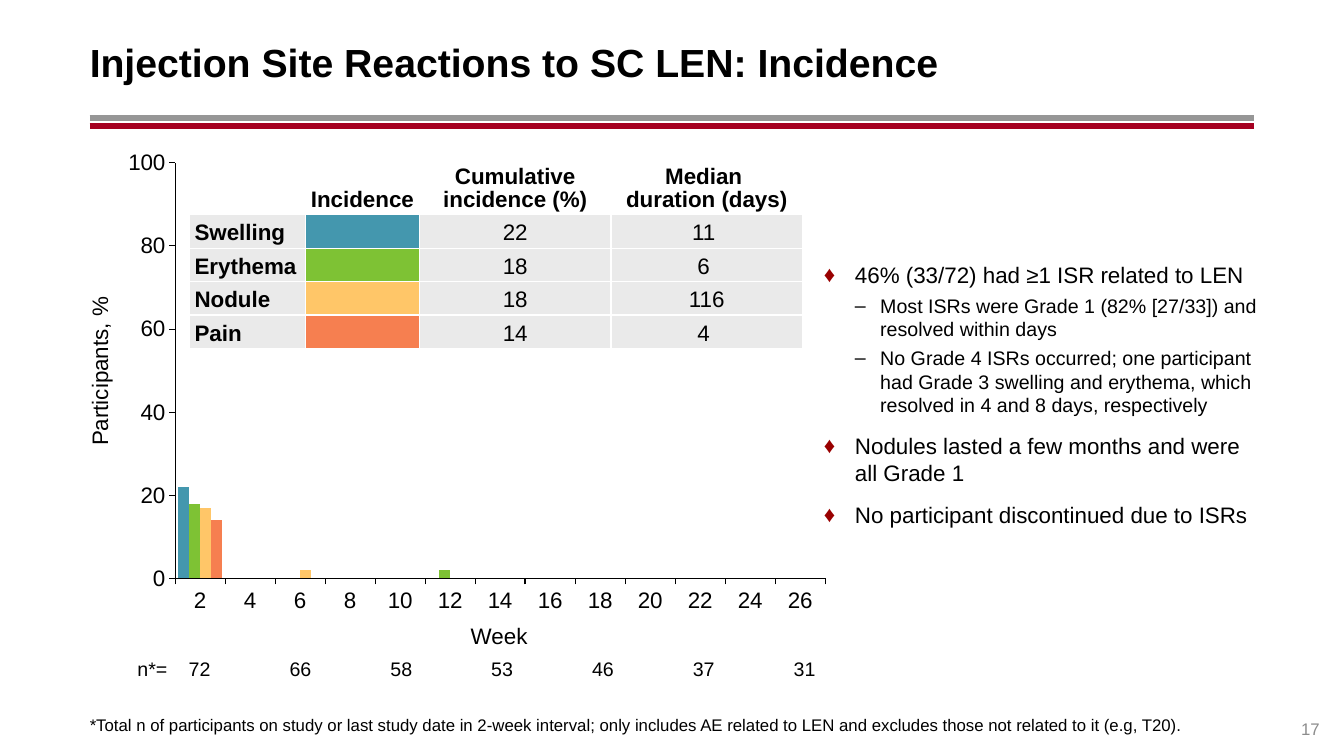
"""Build the slide on the incidence of injection site reactions."""
import pptx
import pptx.chart.data
import pptx.dml.color
import pptx.enum.chart
import pptx.enum.shapes
import pptx.enum.text
import pptx.oxml
import pptx.oxml.ns
import pptx.util

WIDTH, HEIGHT = 13.33, 7.5
LEFT, RIGHT = 0.89, 12.44
FONT, BLACK, PALE = "Arial", "000000", "EAEAEA"
ALIGN = pptx.enum.text.PP_ALIGN
ANCHOR = pptx.enum.text.MSO_ANCHOR
INSETS = (0.1, 0.05, 0.1, 0.05)

TITLE = "Injection Site Reactions to SC LEN: Incidence"
RULES = [(1.17, "969696"), (1.25, "A50021")]
WEEKS = range(2, 27, 2)
HEADINGS = ["", "Incidence", "Cumulative incidence (%)", "Median \nduration (days)"]
REACTIONS = [
    ("Swelling", "4497AE", "22", "11 ", {2: 22}),
    ("Erythema", "7EC234", "18", "6 ", {2: 18, 12: 2}),
    ("Nodule", "FFC668", "18", "116", {2: 17, 6: 2}),
    ("Pain", "F67F50", "14", "4 ", {2: 14}),
]
COUNTS = {2: "72", 6: "66", 10: "58", 14: "53", 18: "46", 22: "37", 26: "31"}
FINDINGS = [
    (0, "46% (33/72) had ≥1 ISR related to LEN"),
    (1, "Most ISRs were Grade 1 (82% [27/33]) and resolved within days"),
    (1, "No Grade 4 ISRs occurred; one participant had Grade 3 swelling and erythema, "
        "which resolved in 4 and 8 days, respectively"),
    (0, "Nodules lasted a few months and were all Grade 1"),
    (0, "No participant discontinued due to ISRs"),
]
LEVELS = [
    dict(size=16, indent=0.31, hang=0.31, before=9, mark="♦", color="990000"),
    dict(size=14, indent=0.56, hang=0.25, before=2, mark="–", color=BLACK),
]
FOOTNOTE = ("*Total n of participants on study or last study date in 2-week interval; "
            "only includes AE related to LEN and excludes those not related to it (e.g, T20).")


def inches(*lengths):
    """Convert lengths in inches."""
    return [pptx.util.Inches(length) for length in lengths]


def rgb(color):
    """Turn a hex string into a colour."""
    return pptx.dml.color.RGBColor.from_string(color)


def xml(tag, attributes="", inner=""):
    """Make an element of the drawing or chart namespace."""
    spaces = pptx.oxml.ns.nsdecls(tag.split(":")[0])
    return pptx.oxml.parse_xml(f"<{tag} {spaces} {attributes}>{inner}</{tag}>")


def style(font, size, color=BLACK, bold=False):
    """Set the face, size, colour and weight of a font."""
    font.name, font.size, font.bold = FONT, pptx.util.Pt(size), bold
    font.color.rgb = rgb(color)


def write(paragraph, text, size, color=BLACK, bold=False, align=ALIGN.LEFT):
    """Add one formatted run to a paragraph."""
    run = paragraph.add_run()
    run.text = text
    style(run.font, size, color, bold)
    paragraph.alignment = align


def set_frame(frame, insets, anchor):
    """Set the wrapping, insets and anchor of a text frame."""
    frame.word_wrap = True
    frame.vertical_anchor = anchor
    frame.margin_left, frame.margin_top, frame.margin_right, frame.margin_bottom = inches(*insets)


def add_text(slide, box, text, size, color=BLACK, align=ALIGN.LEFT, insets=(0, 0, 0, 0)):
    """Add a bottom-anchored text box with one run."""
    shape = slide.shapes.add_textbox(*inches(*box))
    set_frame(shape.text_frame, insets, ANCHOR.BOTTOM)
    write(shape.text_frame.paragraphs[0], text, size, color, align=align)
    return shape


def add_table(slide, left, top, columns, rows):
    """Add a plain table with the given column widths and row heights."""
    box = inches(left, top, sum(columns), sum(rows))
    table = slide.shapes.add_table(len(rows), len(columns), *box).table
    table.first_row = table.horz_banding = False
    for column, width in zip(table.columns, inches(*columns)):
        column.width = width
    for row, height in zip(table.rows, inches(*rows)):
        row.height = height
    return table


def fill_cell(cell, text, size, insets, anchor, align, fill=None, bold=False, spacing=1.0):
    """Write a cell, with white borders and an optional fill."""
    cell.vertical_anchor = anchor
    cell.margin_left, cell.margin_top, cell.margin_right, cell.margin_bottom = inches(*insets)
    frame = cell.text_frame
    for index, line in enumerate(text.split("\n")):
        paragraph = frame.add_paragraph() if index else frame.paragraphs[0]
        paragraph.line_spacing = spacing
        if line:
            write(paragraph, line, size, bold=bold, align=align)
        else:
            paragraph._p.append(xml("a:endParaRPr", f'sz="{size * 100}"'))
    white = '<a:solidFill><a:srgbClr val="FFFFFF"/></a:solidFill>'
    for side in "LRTB":
        cell._tc.get_or_add_tcPr().append(xml(f"a:ln{side}", 'w="12700"', white))
    if fill:
        cell.fill.solid()
        cell.fill.fore_color.rgb = rgb(fill)
    else:
        cell.fill.background()


def add_incidence_chart(slide):
    """Add the clustered columns by week."""
    data = pptx.chart.data.CategoryChartData()
    data.categories = [str(week) for week in WEEKS]
    for index, reaction in enumerate(REACTIONS, 1):
        data.add_series(f"Series {index}", [reaction[4].get(week) for week in WEEKS])
    kind = pptx.enum.chart.XL_CHART_TYPE.COLUMN_CLUSTERED
    chart = slide.shapes.add_chart(kind, *inches(1.14, 1.48, 7.18, 4.67), data).chart
    chart.has_legend = chart.has_title = False
    style(chart.font, 10)
    plot = chart.plots[0]
    plot.gap_width, plot.overlap, plot.vary_by_categories = 50, 0, False
    for series, reaction in zip(plot.series, REACTIONS):
        series.format.fill.solid()
        series.format.fill.fore_color.rgb = rgb(reaction[1])
    for axis in (chart.category_axis, chart.value_axis):
        axis.has_major_gridlines = False
        axis.major_tick_mark = pptx.enum.chart.XL_TICK_MARK.OUTSIDE
        axis.minor_tick_mark = pptx.enum.chart.XL_TICK_MARK.NONE
        style(axis.tick_labels.font, 16)
        axis.format.line.color.rgb = rgb(BLACK)
        axis.format.line.width = pptx.util.Pt(0.75)
    scale = chart.value_axis
    scale.minimum_scale, scale.maximum_scale, scale.major_unit = 0, 100, 20
    area = chart._chartSpace.chart.plotArea
    for old in area.findall(pptx.oxml.ns.qn("c:layout")):
        area.remove(old)
    settings = dict(layoutTarget="inner", xMode="edge", yMode="edge",
                    x=0.083, y=0.029, w=0.898, h=0.883)
    inner = "".join(f'<c:{key} val="{value}"/>' for key, value in settings.items())
    area.insert(0, xml("c:layout", "", f"<c:manualLayout>{inner}</c:manualLayout>"))


def add_reaction_table(slide):
    """Add the table that also serves as the chart's key."""
    table = add_table(slide, 1.88, 1.59, [1.15, 1.13, 1.9, 1.9], [0.54] + [0.31] * 4)
    rows = [HEADINGS] + [[name, "", share, days] for name, _, share, days, _ in REACTIONS]
    for r, row in enumerate(rows):
        for c, text in enumerate(row):
            fill = None if r == 0 else REACTIONS[r - 1][1] if c == 1 else PALE
            fill_cell(table.cell(r, c), text, 16, (0.05, 0.03, 0.05, 0.03), ANCHOR.BOTTOM,
                      ALIGN.CENTER if c else ALIGN.LEFT, fill, r == 0 or c == 0, 0.9)


def add_count_table(slide):
    """Add the participant counts under the weeks."""
    table = add_table(slide, 1, 6.53, [0.73] + [0.5] * len(WEEKS), [0.23])
    fill_cell(table.cell(0, 0), "n*=", 14, (0, 0, 0.07, 0), ANCHOR.MIDDLE, ALIGN.RIGHT)
    for column, week in enumerate(WEEKS, 1):
        fill_cell(table.cell(0, column), COUNTS.get(week, ""), 14, (0, 0, 0, 0),
                  ANCHOR.MIDDLE, ALIGN.CENTER)


def add_findings(slide):
    """Add the bulleted findings."""
    frame = slide.shapes.add_textbox(*inches(8.17, 2.54, 4.41, 3.33)).text_frame
    set_frame(frame, (0, 0.05, 0.1, 0.05), ANCHOR.TOP)
    for index, (level, text) in enumerate(FINDINGS):
        look = LEVELS[level]
        paragraph = frame.add_paragraph() if index else frame.paragraphs[0]
        write(paragraph, text, look["size"])
        paragraph.level = level
        paragraph.space_before = pptx.util.Pt(look["before"])
        paragraph.space_after = pptx.util.Pt(2)
        properties = paragraph._p.get_or_add_pPr()
        indent, hang = inches(look["indent"], look["hang"])
        properties.set("marL", str(indent))
        properties.set("indent", str(-hang))
        properties.append(xml("a:buClr", "", f'<a:srgbClr val="{look["color"]}"/>'))
        properties.append(xml("a:buFont", f'typeface="{FONT}"'))
        properties.append(xml("a:buChar", f'char="{look["mark"]}"'))


def main():
    """Build and save the slide."""
    deck = pptx.Presentation()
    deck.slide_width, deck.slide_height = inches(WIDTH, HEIGHT)
    slide = deck.slides.add_slide(deck.slide_layouts[5])
    for y, color in RULES:
        rule = slide.shapes.add_connector(pptx.enum.shapes.MSO_CONNECTOR.STRAIGHT,
                                          *inches(LEFT, y, RIGHT, y))
        rule.line.color.rgb, rule.line.width = rgb(color), pptx.util.Pt(4.25)
        rule._element.spPr.append(xml("a:effectLst"))
    title = slide.shapes.title
    title.left, title.top, title.width, title.height = inches(LEFT, 0.18, 9.92, 0.86)
    set_frame(title.text_frame, (0, 0.05, 0.1, 0.05), ANCHOR.MIDDLE)
    write(title.text_frame.paragraphs[0], TITLE, 28, bold=True)
    add_incidence_chart(slide)
    add_reaction_table(slide)
    add_text(slide, (LEFT, 6.79, RIGHT - LEFT, 0.5), FOOTNOTE, 12)
    add_text(slide, (RIGHT, 6.93, 0.65, 0.4), "17", 12, "8C8C8C", ALIGN.RIGHT)
    share = add_text(slide, (-0.08, 3.5, 2.12, 0.37), "Participants, %", 16,
                     align=ALIGN.CENTER, insets=INSETS)
    share.rotation = 270
    add_text(slide, (4.19, 6.12, 1.52, 0.37), "Week", 16, align=ALIGN.CENTER, insets=INSETS)
    add_count_table(slide)
    add_findings(slide)
    deck.save("out.pptx")


if __name__ == "__main__":
    main()
